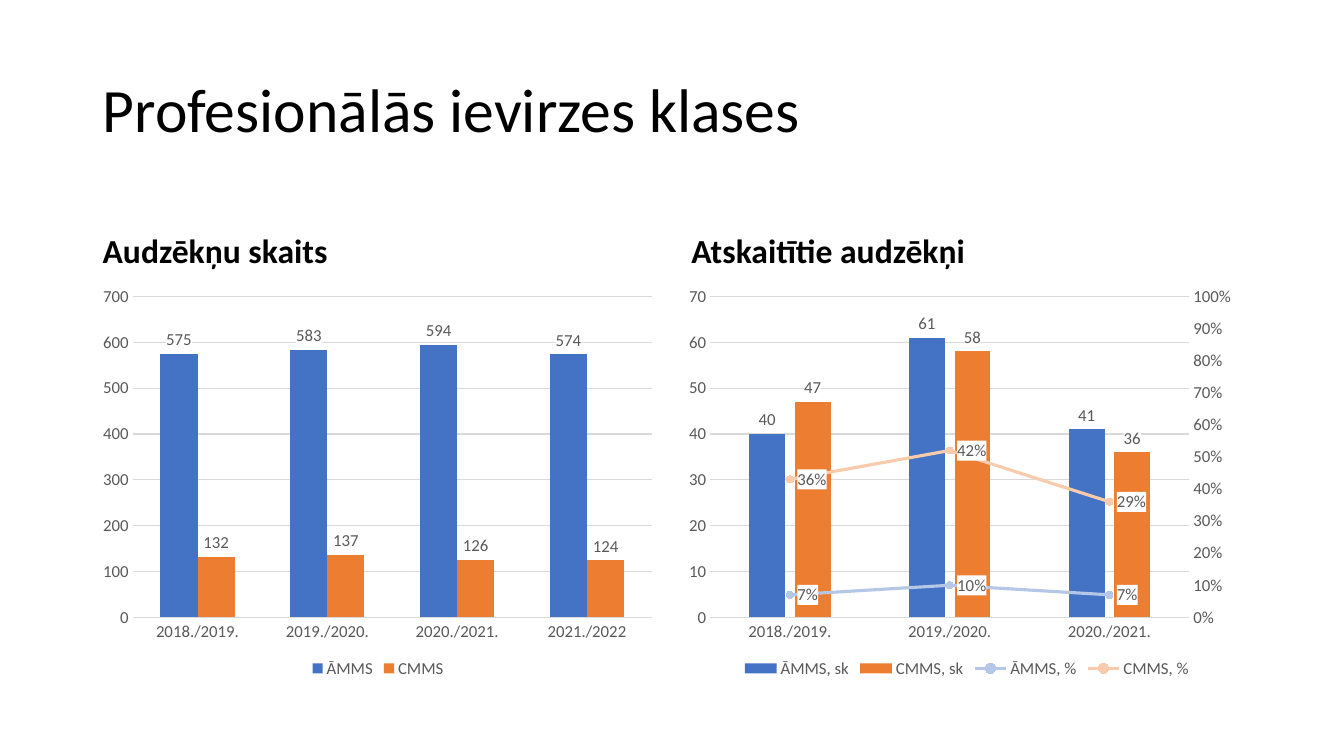
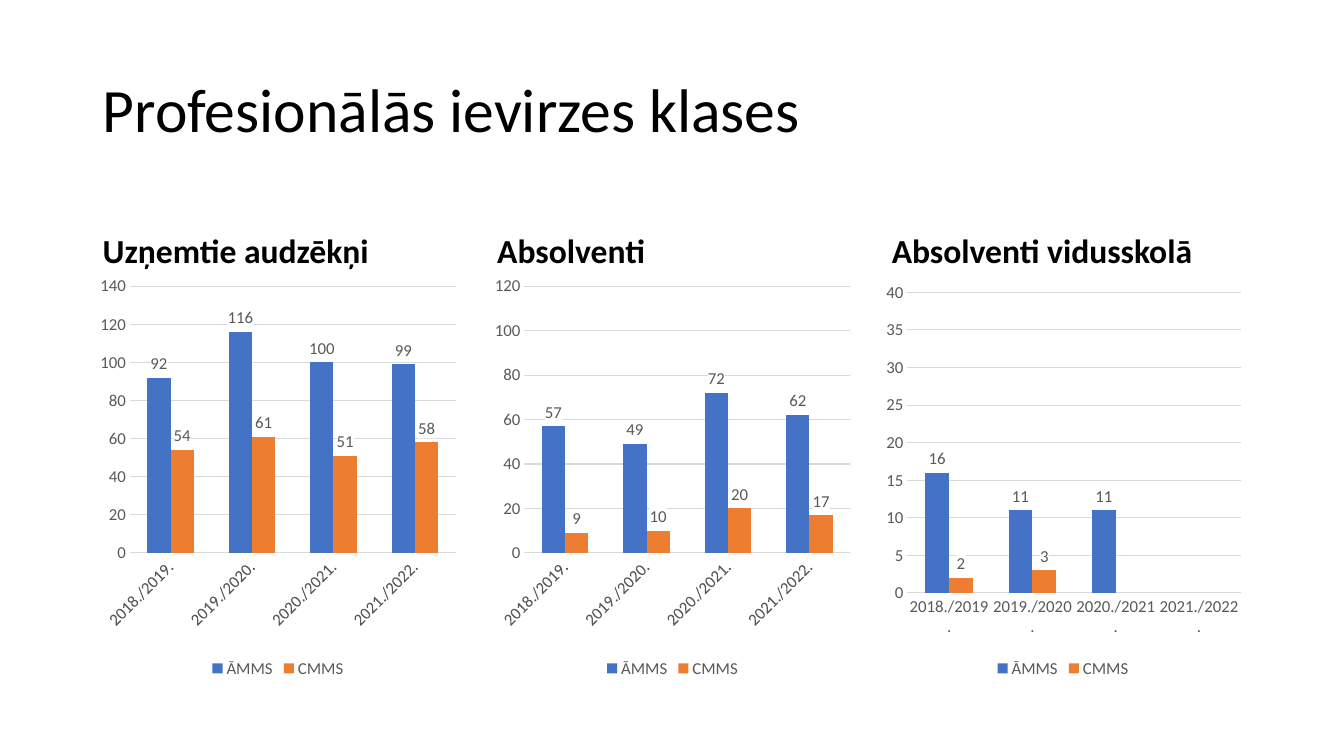
from pptx import Presentation
from pptx.chart.axis import ValueAxis
from pptx.chart.data import CategoryChartData
from pptx.dml.color import RGBColor
from pptx.enum.chart import XL_CHART_TYPE as ChartType, XL_LABEL_POSITION as LabelSpot
from pptx.enum.chart import XL_LEGEND_POSITION as LegendSpot, XL_MARKER_STYLE as Marker
from pptx.enum.chart import XL_TICK_MARK as Tick
from pptx.enum.text import MSO_ANCHOR as Anchor, MSO_AUTO_SIZE as AutoSize, PP_ALIGN as Align
from pptx.oxml import parse_xml
from pptx.oxml.ns import nsdecls, qn
from pptx.util import Inches, Pt

FONT = "Calibri"
COLORS = {"text": "000000", "label": "595959", "grid": "D9D9D9", "back": "FFFFFF",
          "ĀMMS": "4472C4", "CMMS": "ED7D31", "ĀMMS, sk": "4472C4", "CMMS, sk": "ED7D31",
          "ĀMMS, %": "B4C7E7", "CMMS, %": "F8CBAD"}
MARGIN, CONTENT = 0.92, 11.5
TITLE_TOP, HEAD_TOP, CHART_TOP, CHART_BOTTOM = 0.4, 1.84, 2.74, 6.77
TITLE = "Profesionālās ievirzes klases"
YEARS = ["2018./2019.", "2019./2020.", "2020./2021.", "2021./2022."]

SLIDES = [
    {"gap": 0.18, "panels": [
        {"head": "Audzēkņu skaits", "years": YEARS[:3] + ["2021./2022"],
         "plot": (0.07, 0.05, 0.91, 0.79),
         "series": {"ĀMMS": [575, 583, 594, 574], "CMMS": [132, 137, 126, 124]}},
        {"head": "Atskaitītie audzēkņi", "years": YEARS[:3],
         "plot": (0.05, 0.05, 0.84, 0.79), "bar_gap": 219, "overlap": -27,
         "series": {"ĀMMS, sk": [40, 61, 41], "CMMS, sk": [47, 58, 36],
                    "ĀMMS, %": [0.07, 0.1, 0.07], "CMMS, %": [0.36, 0.42, 0.29]}},
    ]},
    {"gap": 0.24, "panels": [
        {"head": "Uzņemtie audzēkņi", "turn": -45, "plot": (0.1, 0.02, 0.88, 0.66),
         "series": {"ĀMMS": [92, 116, 100, 99], "CMMS": [54, 61, 51, 58]}},
        {"head": "Absolventi", "turn": -45, "plot": (0.1, 0.02, 0.88, 0.66), "max": 120,
         "series": {"ĀMMS": [57, 49, 72, 62], "CMMS": [9, 10, 20, 17]}},
        {"head": "Absolventi vidusskolā", "plot": (0.08, 0.04, 0.9, 0.74), "max": 40,
         "shift": -0.04,
         "series": {"ĀMMS": [16, 11, 11, None], "CMMS": [2, 3, None, None]}},
    ]},
]


def style_font(font, size=12, color="label", bold=False):
    font.name, font.size, font.bold = FONT, Pt(size), bold
    font.color.rgb = RGBColor.from_string(COLORS[color])


def write_text(frame, text, size, anchor, bold=False, before=0):
    frame.word_wrap, frame.auto_size = True, AutoSize.NONE
    frame.vertical_anchor = anchor
    para = frame.paragraphs[0]
    para.alignment, para.line_spacing, para.space_before = Align.LEFT, 0.9, Pt(before)
    span = para.add_run()
    span.text = text
    style_font(span.font, size, "text", bold)


deck = Presentation()
deck.slide_width, deck.slide_height = Inches(13.33), Inches(7.5)

for content in SLIDES:
    page = deck.slides.add_slide(deck.slide_layouts[5])
    title = page.shapes.title
    title.left, title.top = Inches(MARGIN), Inches(TITLE_TOP)
    title.width, title.height = Inches(CONTENT), Inches(HEAD_TOP - TITLE_TOP)
    write_text(title.text_frame, TITLE, 44, Anchor.MIDDLE)

    panels, gap = content["panels"], content["gap"]
    width = (CONTENT - gap * (len(panels) - 1)) / len(panels)
    for column, panel in enumerate(panels):
        left = MARGIN + column * (width + gap)
        box = page.shapes.add_textbox(Inches(left), Inches(HEAD_TOP),
                                      Inches(width), Inches(CHART_TOP - HEAD_TOP))
        write_text(box.text_frame, panel["head"], 24, Anchor.BOTTOM, True, 10)

        data = CategoryChartData()
        data.categories = panel.get("years", YEARS)
        for name, values in panel["series"].items():
            data.add_series(name, values, "0%" if "%" in name else "General")
        chart = page.shapes.add_chart(
            ChartType.COLUMN_CLUSTERED, Inches(left + panel.get("shift", 0)), Inches(CHART_TOP),
            Inches(width), Inches(CHART_BOTTOM - CHART_TOP), data).chart
        style_font(chart.font, 10, "text")
        chart.has_title = False
        chart.has_legend = True
        chart.legend.position = LegendSpot.BOTTOM
        chart.legend.include_in_layout = False
        style_font(chart.legend.font)

        bars = chart.plots[0]
        bars.vary_by_categories = False
        bars.gap_width, bars.overlap = panel.get("bar_gap", 150), panel.get("overlap", 0)

        axes = [chart.category_axis, chart.value_axis]
        chart.value_axis.minimum_scale = 0
        if "max" in panel:
            chart.value_axis.maximum_scale = panel["max"]
        chart.value_axis.has_major_gridlines = True
        grid = chart.value_axis.major_gridlines.format.line
        grid.width = Pt(0.75)
        grid.color.rgb = RGBColor.from_string(COLORS["grid"])

        area = chart._chartSpace.chart.plotArea
        shares = "".join(f'<c:{key} val="{share}"/>' for key, share in zip("xywh", panel["plot"]))
        for old in area.findall(qn("c:layout")):
            area.remove(old)
        area.insert(0, parse_xml(
            f'<c:layout {nsdecls("c")}><c:manualLayout><c:layoutTarget val="inner"/>'
            f'<c:xMode val="edge"/><c:yMode val="edge"/>{shares}</c:manualLayout></c:layout>'))

        percents = [series for series in bars.series if "%" in series.name]
        if percents:
            lines = parse_xml(
                f'<c:lineChart {nsdecls("c")}><c:grouping val="stacked"/><c:varyColors val="0"/>'
                '<c:marker val="1"/><c:axId val="501"/><c:axId val="502"/></c:lineChart>')
            for series in percents:
                element = series._element
                for flag in element.findall(qn("c:invertIfNegative")):
                    element.remove(flag)
                lines.find(qn("c:marker")).addprevious(element)
            bars._element.addnext(lines)
            last = chart.value_axis._element
            for tag, own, other, hidden, side, cross in [
                    ("valAx", 502, 501, 0, "r", "max"), ("catAx", 501, 502, 1, "b", "autoZero")]:
                axis = parse_xml(
                    f'<c:{tag} {nsdecls("c")}><c:axId val="{own}"/>'
                    '<c:scaling><c:orientation val="minMax"/></c:scaling>'
                    f'<c:delete val="{hidden}"/><c:axPos val="{side}"/>'
                    '<c:numFmt formatCode="0%" sourceLinked="0"/>'
                    '<c:majorTickMark val="out"/><c:minorTickMark val="none"/>'
                    f'<c:tickLblPos val="nextTo"/><c:crossAx val="{other}"/>'
                    f'<c:crosses val="{cross}"/></c:{tag}>')
                last.addnext(axis)
                last = axis
                if tag == "valAx":
                    right = ValueAxis(axis)
                    right.minimum_scale, right.maximum_scale = 0, 1
                    right.major_unit = 0.1
                    axes.append(right)

        for axis in axes:
            axis.major_tick_mark = axis.minor_tick_mark = Tick.NONE
            axis.format.line.fill.background()
            style_font(axis.tick_labels.font)
        turn = panel.get("turn", 0) * 60000
        chart.category_axis._element.txPr.bodyPr.set("rot", str(turn))

        for plot in chart.plots:
            for series in plot.series:
                color = RGBColor.from_string(COLORS[series.name])
                labels = series.data_labels
                labels.show_value = True
                style_font(labels.font)
                labels._element.find(qn("c:txPr")).addprevious(parse_xml(
                    f'<c:spPr {nsdecls("c", "a")}><a:solidFill>'
                    f'<a:srgbClr val="{COLORS["back"]}"/></a:solidFill></c:spPr>'))
                if "%" in series.name:
                    series.smooth = False
                    series.format.line.width = Pt(2.25)
                    series.format.line.color.rgb = color
                    series.marker.style, series.marker.size = Marker.CIRCLE, 5
                    for part in (series.marker.format.fill, series.marker.format.line.fill):
                        part.solid()
                        part.fore_color.rgb = color
                    labels.number_format, labels.number_format_is_linked = "0%", False
                    labels.position = LabelSpot.RIGHT
                else:
                    series.format.fill.solid()
                    series.format.fill.fore_color.rgb = color
                    labels.position = LabelSpot.OUTSIDE_END

deck.save("out.pptx")
